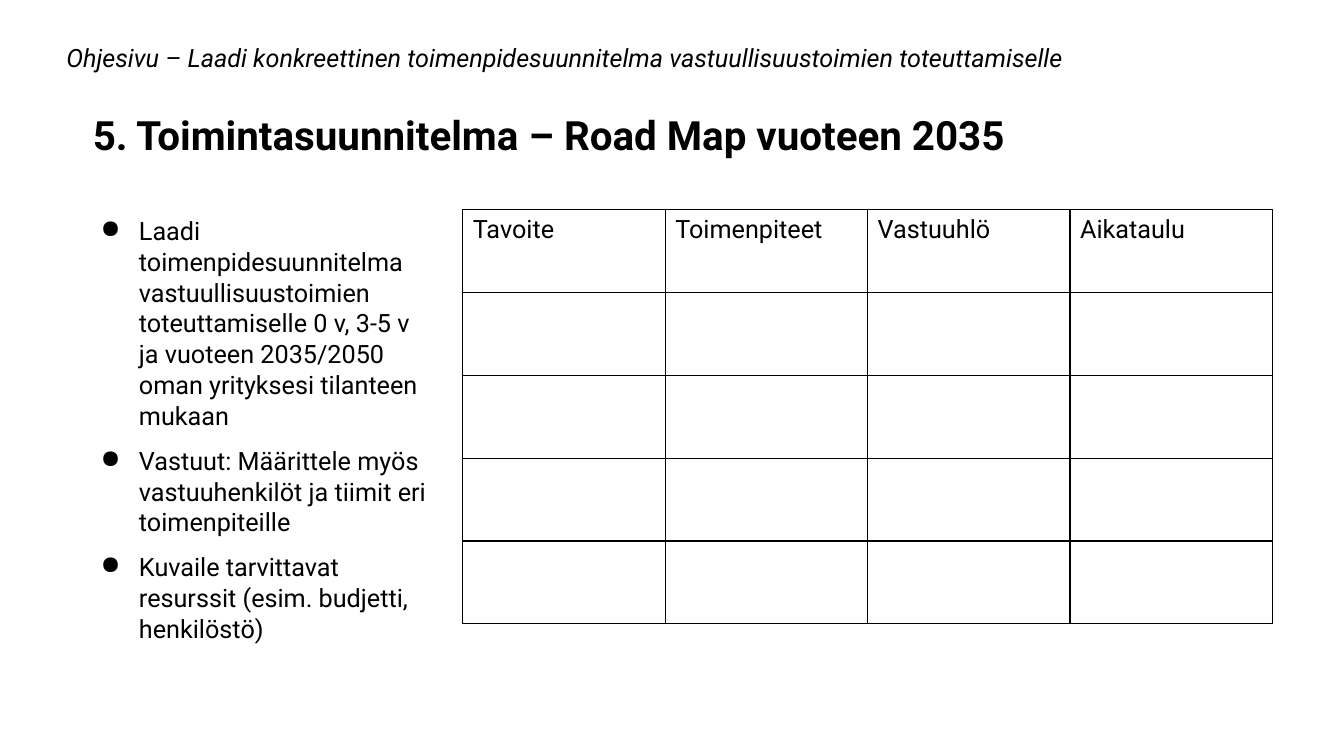
from dataclasses import dataclass

from lxml.etree import SubElement
from pptx import Presentation
from pptx.dml.color import RGBColor
from pptx.enum.text import MSO_ANCHOR, MSO_AUTO_SIZE, PP_ALIGN
from pptx.oxml.ns import qn
from pptx.util import Inches, Pt


@dataclass(frozen=True)
class Theme:
    font: str = "Roboto"
    ink: str = "000000"
    paper: str = "FFFFFF"
    title_size: float = 28.8
    text_size: float = 18
    border: float = 1
    indent: float = 0.38


THEME = Theme()
WIDTH, HEIGHT = 13.33, 7.5

# Shared lines of the layout, in inches
CONTENT_TOP, CONTENT_HEIGHT = 2.08, 4.11
TITLE_TOP = CONTENT_TOP / 2
TABLE_LEFT, TABLE_WIDTH = 4.59, 8.03

HEADERS = ["Tavoite", "Toimenpiteet", "Vastuuhlö", "Aikataulu"]
ROW_COUNT = 5
INSTRUCTIONS = [
    "Laadi toimenpidesuunnitelma vastuullisuustoimien toteuttamiselle 0 v, 3-5 v "
    "ja vuoteen 2035/2050 oman yrityksesi tilanteen mukaan",
    "Vastuut: Määrittele myös vastuuhenkilöt ja tiimit eri toimenpiteille",
    "Kuvaile tarvittavat resurssit (esim. budjetti, henkilöstö)",
]


def add_bullet(para):
    props = para._p.get_or_add_pPr()
    props.set("marL", str(Inches(THEME.indent)))
    props.set("indent", str(-Inches(THEME.indent)))
    SubElement(props, qn("a:buChar")).set("char", "●")


def write(frame, texts, size=THEME.text_size, bold=False, italic=False,
          bullet=False, spacing=None, gap=0):
    """Fill a text frame with one paragraph for each text."""
    frame.word_wrap = True
    for index, text in enumerate(texts):
        para = frame.add_paragraph() if index else frame.paragraphs[0]
        para.alignment = PP_ALIGN.LEFT
        if bullet:
            add_bullet(para)
        if spacing:
            para.line_spacing = spacing
        if index:
            para.space_before = Pt(gap)
        span = para.add_run()
        span.text = text
        span.font.name = THEME.font
        span.font.size = Pt(size)
        span.font.bold = bold
        span.font.italic = italic
        span.font.color.rgb = RGBColor.from_string(THEME.ink)


def add_text(page, area, texts, **style):
    box = page.shapes.add_textbox(*map(Inches, area))
    write(box.text_frame, texts, **style)


def set_title(page, area, text):
    title = page.shapes.title
    title.left, title.top, title.width, title.height = map(Inches, area)
    frame = title.text_frame
    frame.auto_size = MSO_AUTO_SIZE.NONE
    frame.vertical_anchor = MSO_ANCHOR.TOP
    frame.margin_top = Inches(0.11)
    write(frame, [text], size=THEME.title_size, bold=True, spacing=0.9)


def format_cell(cell):
    # Borders come before the fill in the cell properties
    props = cell._tc.get_or_add_tcPr()
    for side in ("lnL", "lnR", "lnT", "lnB"):
        line = SubElement(props, qn(f"a:{side}"), w=str(Pt(THEME.border)))
        fill = SubElement(line, qn("a:solidFill"))
        SubElement(fill, qn("a:srgbClr"), val=THEME.ink)
    cell.fill.solid()
    cell.fill.fore_color.rgb = RGBColor.from_string(THEME.paper)


def add_plan_table(page, area):
    left, top, width, height = map(Inches, area)
    table = page.shapes.add_table(
        ROW_COUNT, len(HEADERS), left, top, width, height).table
    for cell in table.iter_cells():
        format_cell(cell)
    for column, header in enumerate(HEADERS):
        write(table.cell(0, column).text_frame, [header])


def main():
    deck = Presentation()
    deck.slide_width, deck.slide_height = Inches(WIDTH), Inches(HEIGHT)
    page = deck.slides.add_slide(deck.slide_layouts[5])

    # Heading
    set_title(page, (0.82, TITLE_TOP, 11.04, TITLE_TOP),
              "5. Toimintasuunnitelma – Road Map vuoteen 2035")

    # Instructions beside the table
    add_text(page, (0.9, CONTENT_TOP, 3.45, CONTENT_HEIGHT), INSTRUCTIONS,
             bullet=True, spacing=1.02, gap=10)

    # Guide line above the heading
    add_text(page, (0.56, 0.37, 11.74, 0.4),
             ["Ohjesivu – Laadi konkreettinen toimenpidesuunnitelma "
              "vastuullisuustoimien toteuttamiselle"], italic=True)

    # Empty plan to fill in
    add_plan_table(page, (TABLE_LEFT, CONTENT_TOP, TABLE_WIDTH, CONTENT_HEIGHT))

    deck.save("out.pptx")


if __name__ == "__main__":
    main()
